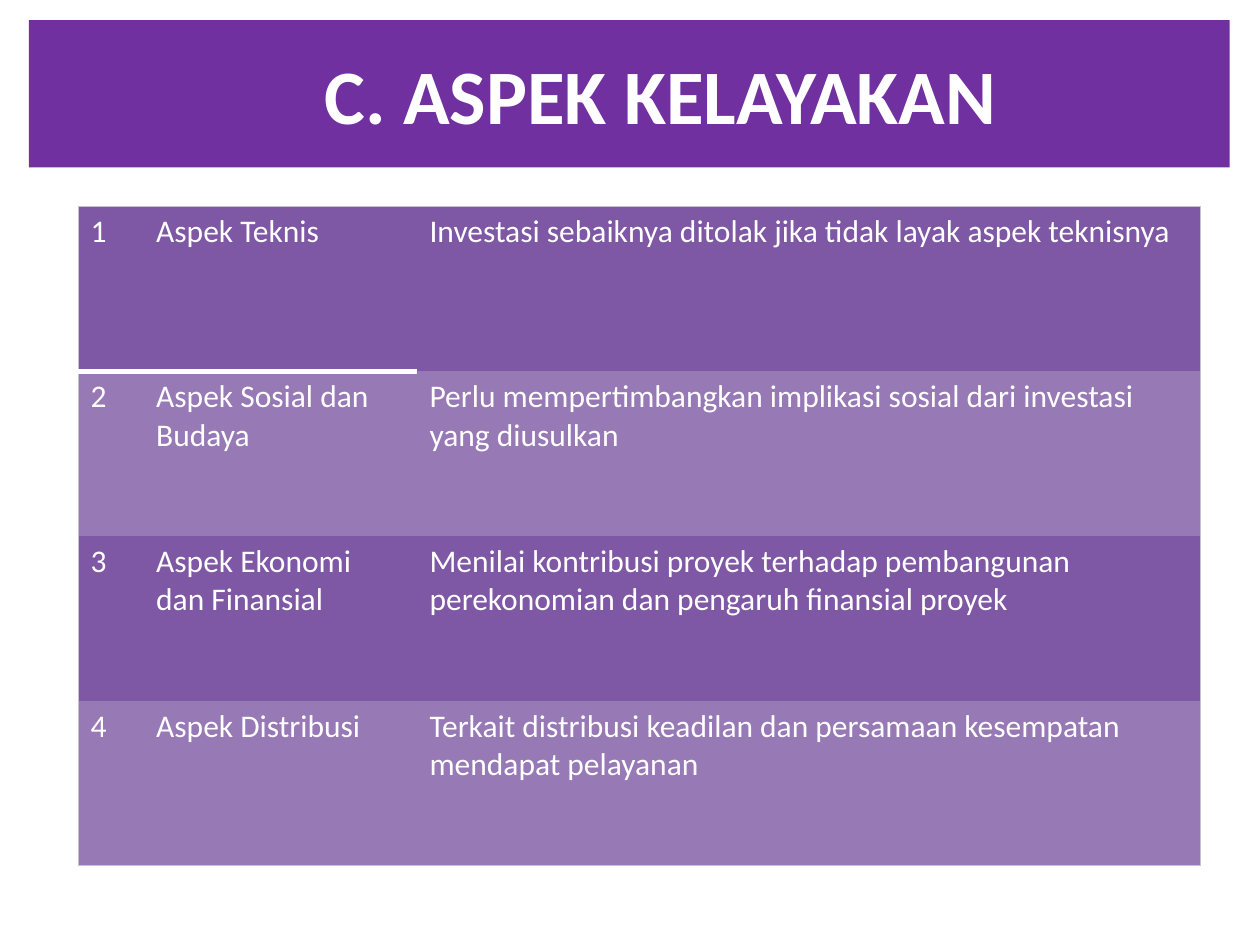
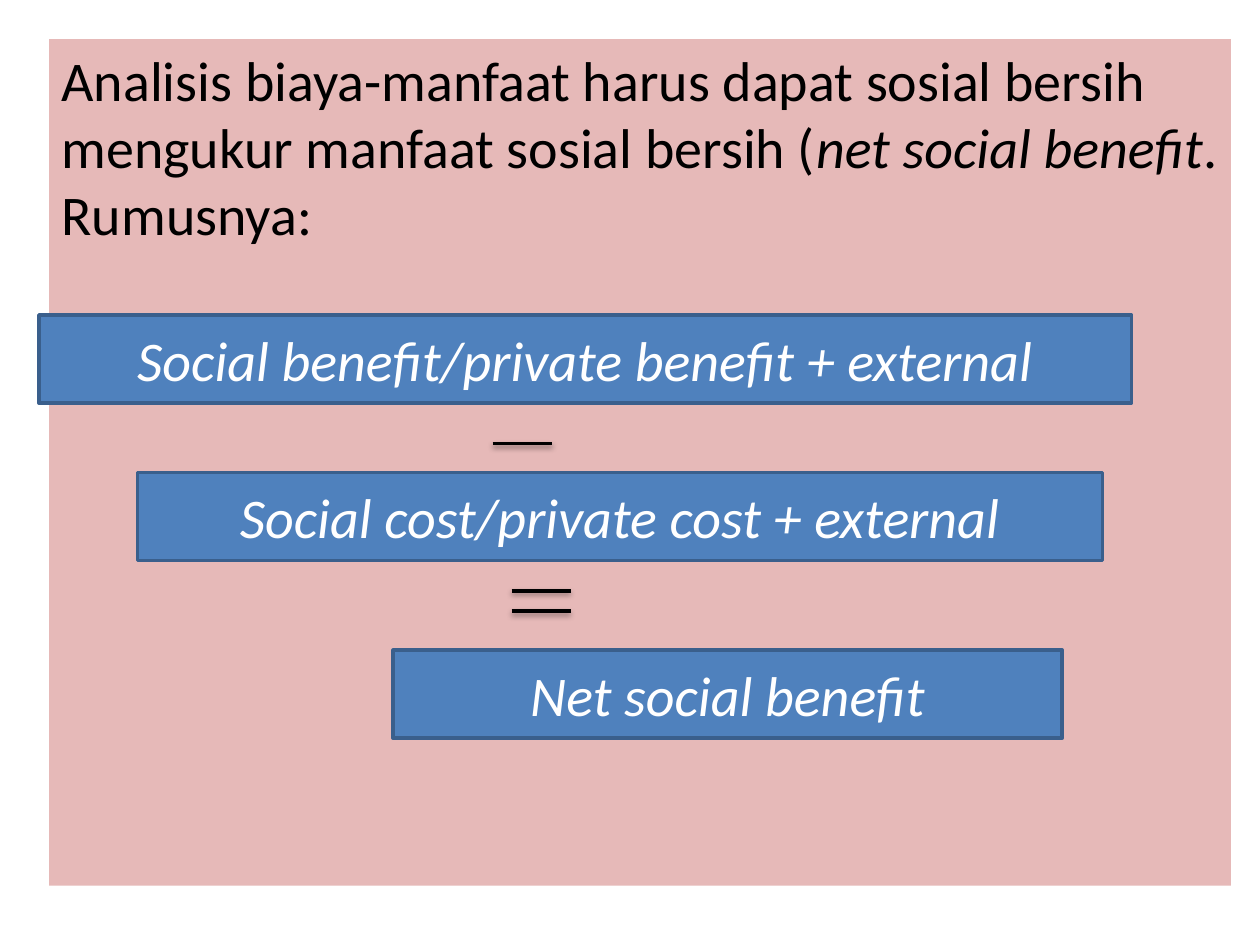
"""Build two slides on feasibility aspects and net social benefit."""
import lxml.etree
import pptx
import pptx.dml.color
import pptx.enum.shapes
import pptx.enum.text
import pptx.oxml
import pptx.oxml.ns
import pptx.util

Inches = pptx.util.Inches
Pt = pptx.util.Pt
RGBColor = pptx.dml.color.RGBColor
ALIGN = pptx.enum.text.PP_ALIGN
ANCHOR = pptx.enum.text.MSO_ANCHOR

FONT = "Calibri"
WHITE = RGBColor(0xFF, 0xFF, 0xFF)
BLACK = RGBColor(0x00, 0x00, 0x00)
BANNER_PURPLE = RGBColor(0x70, 0x30, 0xA0)
ROW_FILLS = [RGBColor(0x7E, 0x57, 0xA5), RGBColor(0x97, 0x79, 0xB6)]
TABLE_EDGE = RGBColor(0xC8, 0xC1, 0xD3)
PANEL_PINK = RGBColor(0xE6, 0xB9, 0xB8)
BOX_BLUE = RGBColor(0x4F, 0x81, 0xBD)
BOX_EDGE = RGBColor(0x3A, 0x5F, 0x8C)
NAMESPACE = pptx.oxml.ns.nsdecls("a")
NO_TABLE_STYLE = "{2D5ABB26-0587-4C30-8999-92F81FD0307C}"


def add_text(para, text, **formats):
    span = para.add_run()
    span.text = text
    color = formats.pop("color")
    for name, value in {"name": FONT, **formats}.items():
        setattr(span.font, name, value)
    span.font.color.rgb = color


def add_box(page, place, fill, edge=None, anchor=ANCHOR.MIDDLE, align=ALIGN.CENTER):
    box = page.shapes.add_shape(pptx.enum.shapes.MSO_SHAPE.RECTANGLE, *map(Inches, place))
    box.shadow.inherit = False
    box.fill.solid()
    box.fill.fore_color.rgb = fill
    if edge is None:
        box.line.fill.background()
    else:
        box.line.color.rgb = edge
        box.line.width = Pt(2)
    box.text_frame.word_wrap = True
    box.text_frame.vertical_anchor = anchor
    para = box.text_frame.paragraphs[0]
    para.alignment = align
    return para


deck = pptx.Presentation()
deck.slide_width = Inches(10)
deck.slide_height = Inches(7.5)
blank = deck.slide_layouts[6]

page = deck.slides.add_slide(blank)
title = add_box(page, (0.23, 0.16, 9.53, 1.17), BANNER_PURPLE)
add_text(title, "\tC. ASPEK KELAYAKAN", size=Pt(44), bold=True, color=WHITE)

aspects = [
    ("Aspek Teknis", "Investasi sebaiknya ditolak jika tidak layak aspek teknisnya"),
    ("Aspek Sosial dan Budaya",
     "Perlu mempertimbangkan implikasi sosial dari investasi yang diusulkan"),
    ("Aspek Ekonomi dan Finansial",
     "Menilai kontribusi proyek terhadap pembangunan perekonomian dan pengaruh finansial proyek"),
    ("Aspek Distribusi",
     "Terkait distribusi keadilan dan persamaan kesempatan mendapat pelayanan"),
]
column_widths = [0.52, 2.17, 6.22]
last_row = len(aspects) - 1
last_column = len(column_widths) - 1
table = page.shapes.add_table(
    len(aspects), len(column_widths), Inches(0.62), Inches(1.64), Inches(8.91), Inches(5.23)
).table
table.first_row = table.horz_banding = False
table._tbl.tblPr.find(pptx.oxml.ns.qn("a:tableStyleId")).text = NO_TABLE_STYLE
for column, width in zip(table.columns, column_widths):
    column.width = Inches(width)

for row_index, aspect in enumerate(aspects):
    for column_index, text in enumerate((str(row_index + 1), *aspect)):
        cell = table.cell(row_index, column_index)
        add_text(cell.text_frame.paragraphs[0], text, size=Pt(18), color=WHITE)
        borders = {}
        if column_index == 0:
            borders["lnL"] = (TABLE_EDGE, 0.75)
        if column_index == last_column:
            borders["lnR"] = (TABLE_EDGE, 0.75)
        if row_index == 0:
            borders["lnT"] = (TABLE_EDGE, 0.75)
        if row_index == 0 and column_index < last_column:
            borders["lnB"] = (WHITE, 3)
        if row_index == last_row:
            borders["lnB"] = (TABLE_EDGE, 0.75)
        for side, (color, width) in borders.items():
            cell._tc.get_or_add_tcPr().append(pptx.oxml.parse_xml(
                f'<a:{side} {NAMESPACE} w="{Pt(width)}"><a:solidFill>'
                f'<a:srgbClr val="{color}"/></a:solidFill></a:{side}>'))
        cell.fill.solid()
        cell.fill.fore_color.rgb = ROW_FILLS[row_index % 2]

page = deck.slides.add_slide(blank)
intro = add_box(page, (0.39, 0.31, 9.38, 6.72), PANEL_PINK, anchor=ANCHOR.TOP, align=ALIGN.LEFT)
for text, italic in [
    ("Analisis biaya-manfaat harus dapat sosial bersih mengukur manfaat sosial bersih (", False),
    ("net social benefit", True),
    (". Rumusnya:", False),
]:
    add_text(intro, text, size=Pt(32), italic=italic, color=BLACK)

for text, left, top, width in [
    ("Social benefit/private benefit + external", 0.31, 2.5, 8.67),
    ("Social cost/private cost + external", 1.09, 3.75, 7.66),
    ("Net social benefit", 3.12, 5.16, 5.31),
]:
    term = add_box(page, (left, top, width, 0.7), BOX_BLUE, BOX_EDGE)
    add_text(term, text, size=Pt(32), italic=True, color=WHITE)

for left, top in [(3.91, 3.52), (4.06, 4.69), (4.06, 4.85)]:
    stroke = page.shapes.add_connector(
        pptx.enum.shapes.MSO_CONNECTOR.STRAIGHT,
        Inches(left), Inches(top), Inches(left + 0.47), Inches(top))
    stroke.line.color.rgb = BLACK
    stroke.line.width = Pt(2)
    stroke._element.spPr.append(pptx.oxml.parse_xml(
        f'<a:effectLst {NAMESPACE}><a:outerShdw blurRad="{Pt(3.1)}" dist="{Pt(1.6)}" '
        f'dir="5400000" rotWithShape="0"><a:srgbClr val="{BLACK}"><a:alpha val="38000"/>'
        '</a:srgbClr></a:outerShdw></a:effectLst>'))

deck.save("out.pptx")
